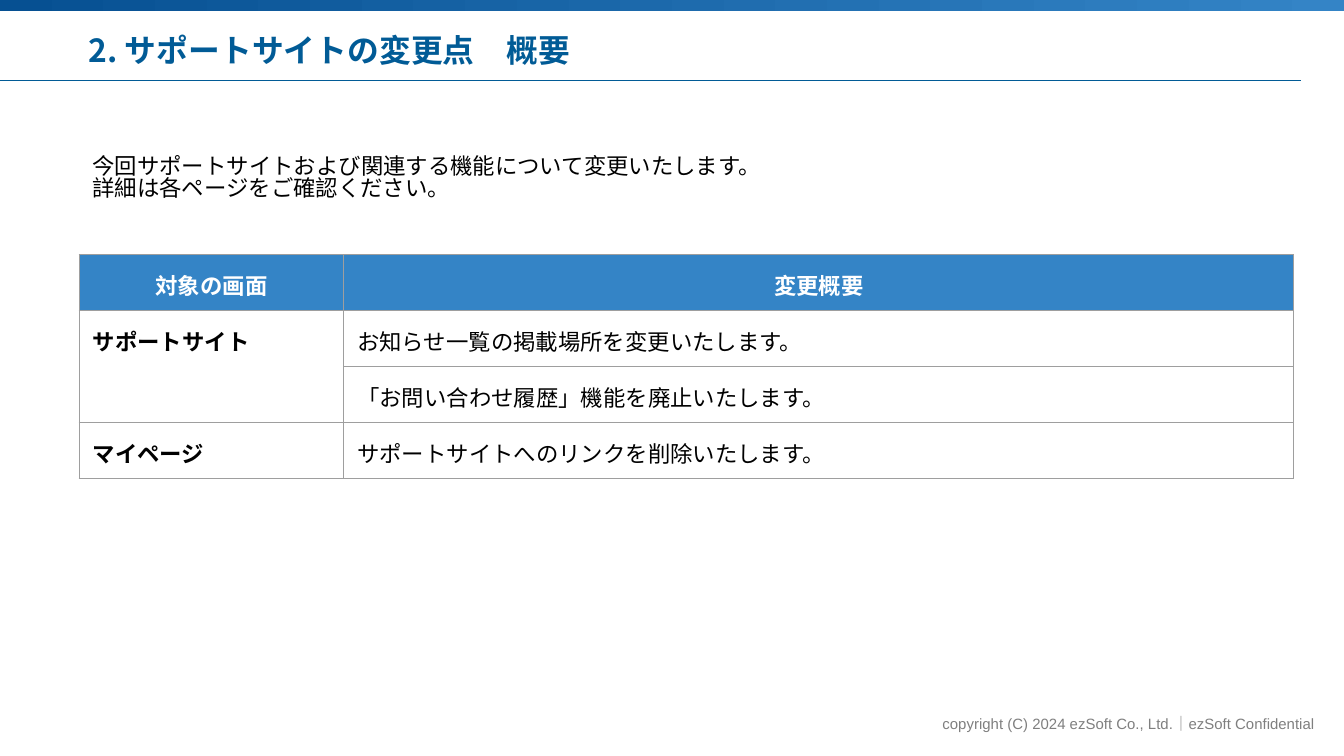
from dataclasses import dataclass

from lxml.etree import SubElement
from pptx import Presentation
from pptx.dml.color import RGBColor
from pptx.enum.shapes import MSO_CONNECTOR, MSO_SHAPE
from pptx.enum.text import MSO_ANCHOR, PP_ALIGN
from pptx.oxml.ns import qn
from pptx.util import Pt


@dataclass(frozen=True)
class Theme:
    title: str = "015B96"
    header: str = "3484C6"
    dark: str = "065092"
    border: str = "9E9E9E"
    footer: str = "7F7F7F"
    text: str = "000000"
    white: str = "FFFFFF"
    latin: str = "Arial"
    japanese: str = "Noto Sans CJK JP"
    title_size: int = 17
    body_size: int = 12
    footer_size: int = 8


THEME = Theme()
LEFT = 42.5
HEADERS = ["対象の画面", "変更概要"]
ROWS = [
    ["サポートサイト", "お知らせ一覧の掲載場所を変更いたします。"],
    ["", "「お問い合わせ履歴」機能を廃止いたします。"],
    ["マイページ", "サポートサイトへのリンクを削除いたします。"],
]


def rgb(color):
    return RGBColor.from_string(color)


def write(tf, text, size, color, font, bold=False, align=PP_ALIGN.LEFT):
    tf.text = text
    p = tf.paragraphs[0]
    p.alignment = align
    p.font.size = Pt(size)
    p.font.bold = bold
    p.font.color.rgb = rgb(color)
    p.font.name = font
    defaults = p._p.pPr.find(qn("a:defRPr"))
    SubElement(defaults, qn("a:ea")).set("typeface", THEME.japanese)
    return p


def set_margins(box, x, y):
    box.margin_left = box.margin_right = Pt(x)
    box.margin_top = box.margin_bottom = Pt(y)


def place_title(s, text):
    sp = s.shapes.title
    sp.left, sp.top, sp.width, sp.height = Pt(LEFT), Pt(12.2), Pt(632), Pt(28.8)
    tf = sp.text_frame
    set_margins(tf, 5, 5)
    tf.vertical_anchor = MSO_ANCHOR.MIDDLE
    write(tf, text, THEME.title_size, THEME.title, THEME.japanese, bold=True)


def add_text(s, text, x, y, w, h, margins, **style):
    tf = s.shapes.add_textbox(Pt(x), Pt(y), Pt(w), Pt(h)).text_frame
    tf.word_wrap = True
    set_margins(tf, *margins)
    return write(tf, text, **style)


def add_top_bar(s):
    sp = s.shapes.add_shape(MSO_SHAPE.RECTANGLE, 0, 0, Pt(720), Pt(5.75))
    sp.shadow.inherit = False
    sp.line.fill.background()
    sp.fill.gradient()
    sp.fill.gradient_angle = 0
    for stop, color in zip(sp.fill.gradient_stops, (THEME.dark, THEME.header)):
        stop.color.rgb = rgb(color)


def add_title_rule(s):
    line = s.shapes.add_connector(MSO_CONNECTOR.STRAIGHT, 0, Pt(43.3), Pt(697), Pt(43.3))
    line.line.color.rgb = rgb(THEME.title)
    line.line.width = Pt(0.75)
    SubElement(line._element.spPr, qn("a:effectLst"))


def set_borders(cell):
    props = cell._tc.get_or_add_tcPr()
    for index, side in enumerate(("lnL", "lnR", "lnT", "lnB")):
        line = props.makeelement(qn(f"a:{side}"), {"w": str(Pt(0.75))})
        fill = SubElement(line, qn("a:solidFill"))
        SubElement(fill, qn("a:srgbClr")).set("val", THEME.border)
        props.insert(index, line)


def format_cell(cell, text, header, bold):
    cell.margin_left = cell.margin_right = cell.margin_top = Pt(7.2)
    cell.margin_bottom = Pt(5)
    if header:
        cell.fill.solid()
        cell.fill.fore_color.rgb = rgb(THEME.header)
    else:
        cell.fill.background()
    set_borders(cell)
    write(cell.text_frame, text, THEME.body_size,
          THEME.white if header else THEME.text, THEME.latin, bold,
          PP_ALIGN.CENTER if header else PP_ALIGN.LEFT)


def add_changes_table(s):
    data = [HEADERS] + ROWS
    widths = (141.7, 509)
    row_height = 30
    table = s.shapes.add_table(len(data), len(widths), Pt(LEFT), Pt(136.5),
                               Pt(sum(widths)), Pt(row_height * len(data))).table
    table.horz_banding = False
    for column, width in zip(table.columns, widths):
        column.width = Pt(width)
    for i, texts in enumerate(data):
        table.rows[i].height = Pt(row_height)
        for j, text in enumerate(texts):
            format_cell(table.cell(i, j), text, header=i == 0, bold=i == 0 or j == 0)
    table.cell(1, 0).merge(table.cell(2, 0))


def main():
    prs = Presentation()
    prs.slide_width, prs.slide_height = Pt(720), Pt(405)
    s = prs.slides.add_slide(prs.slide_layouts[5])
    add_text(s, "copyright (C) 2024 ezSoft Co., Ltd.｜ezSoft Confidential",
             190.8, 380, 518.4, 15, (5, 2.9), size=THEME.footer_size,
             color=THEME.footer, font=THEME.latin, align=PP_ALIGN.RIGHT)
    add_top_bar(s)
    add_title_rule(s)
    place_title(s, "2. サポートサイトの変更点　概要")
    p = add_text(s, "今回サポートサイトおよび関連する機能について変更いたします。\v"
                    "詳細は各ページをご確認ください。",
                 LEFT, 76.5, 476, 44, (7.2, 7.2), size=THEME.body_size,
                 color=THEME.text, font=THEME.japanese)
    p.line_spacing = 0.83
    add_changes_table(s)
    prs.save("out.pptx")


if __name__ == "__main__":
    main()
